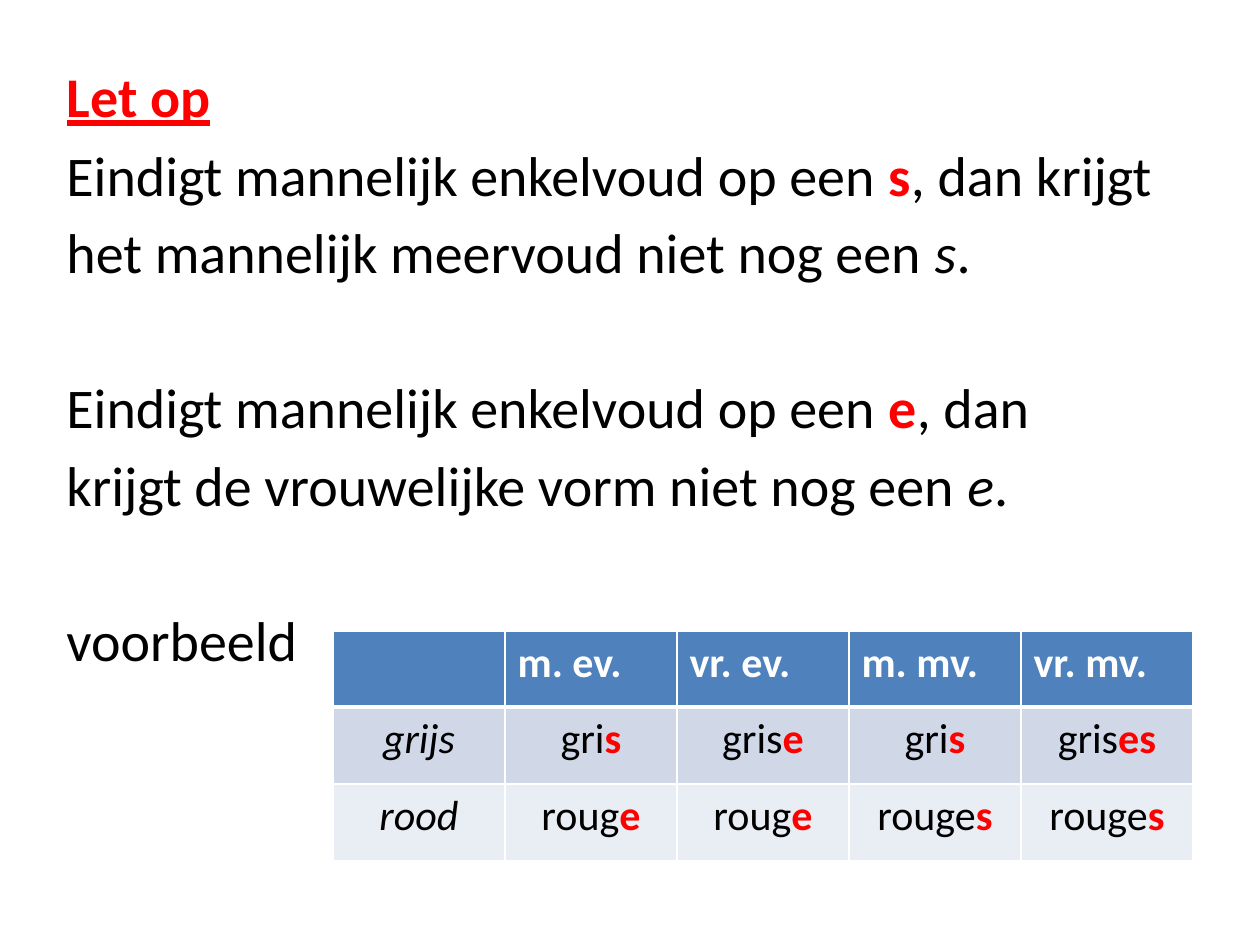
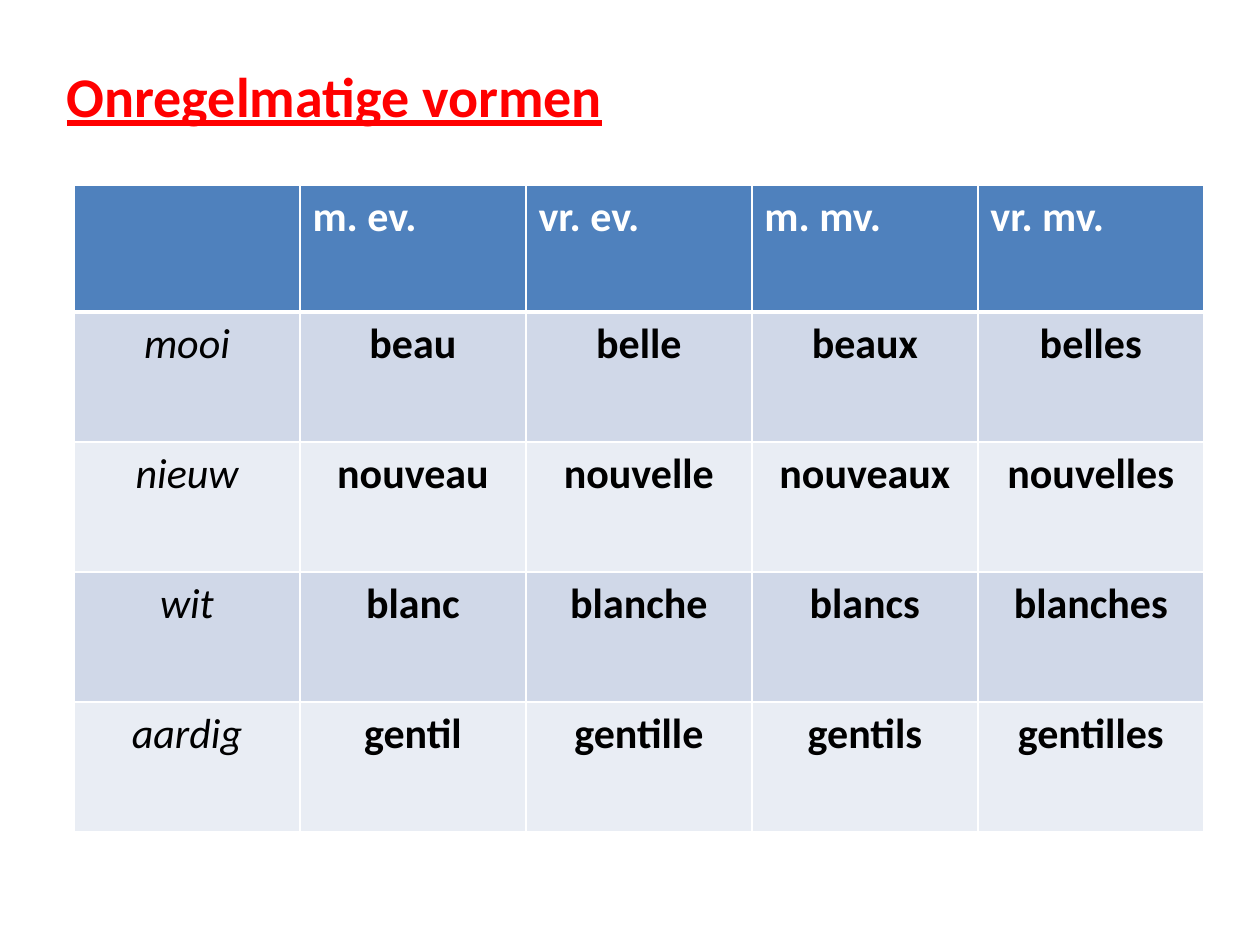
from lxml.etree import SubElement
from pptx import Presentation
from pptx.dml.color import RGBColor
from pptx.enum.text import MSO_ANCHOR as Anchor, MSO_AUTO_SIZE as AutoSize, PP_ALIGN as Align
from pptx.oxml.ns import qn
from pptx.util import Pt

PX = 914400 / 126
COLORS = {"accent": "FF0000", "text": "000000", "white": "FFFFFF",
          "header": "4F81BD", "odd": "D0D8E8", "even": "E9EDF4"}
FONT = "Calibri"
LINE_GAP, BLOCK_GAP = 5.7, 50.5
HEADER = ["", "m. ev.", "vr. ev.", "m. mv.", "vr. mv."]


def px(*lengths):
    return [round(length * PX) for length in lengths]


def add_text(paragraph, text, size=24, color="text", bold=False, italic=False, underline=False):
    run = paragraph.add_run()
    run.text = text
    font = run.font
    font.name, font.size = FONT, Pt(size)
    font.bold, font.italic, font.underline = bold, italic, underline
    font.color.rgb = RGBColor.from_string(COLORS[color])


red_bold = {"color": "accent", "bold": True}
italic = {"italic": True}

rules = [
    (LINE_GAP, "Eindigt mannelijk enkelvoud op een ", "s", red_bold, ", dan krijgt"),
    (LINE_GAP, "het mannelijk meervoud niet nog een ", "s", italic, "."),
    (BLOCK_GAP, "Eindigt mannelijk enkelvoud op een ", "e", red_bold, ", dan"),
    (LINE_GAP, "krijgt de vrouwelijke vorm niet nog een ", "e", italic, "."),
    (BLOCK_GAP, "voorbeeld", "", {}, ""),
]
regular_forms = [
    ["grijs", "gri|s", "gris|e", "gri|s", "gris|es"],
    ["rood", "roug|e", "roug|e", "rouge|s", "rouge|s"],
]
irregular_forms = [
    ["mooi", "beau", "belle", "beaux", "belles"],
    ["nieuw", "nouveau", "nouvelle", "nouveaux", "nouvelles"],
    ["wit", "blanc", "blanche", "blancs", "blanches"],
    ["aardig", "gentil", "gentille", "gentils", "gentilles"],
]
pages = [
    ("Let op", rules, regular_forms, False, (333, 631), 172, 76, 77),
    ("Onregelmatige vormen", [], irregular_forms, True, (74, 185), 226, 127, 130),
]

presentation = Presentation()
presentation.slide_width, presentation.slide_height = px(1260, 945)

for heading, lines, forms, bold_forms, corner, column_width, header_height, row_height in pages:
    slide = presentation.slides.add_slide(presentation.slide_layouts[5])
    title = slide.shapes.title
    title.left, title.top, title.width, title.height = px(54, 55, 1111, 81)
    title.text_frame.auto_size = AutoSize.NONE
    title.text_frame.vertical_anchor = Anchor.TOP
    title_paragraph = title.text_frame.paragraphs[0]
    title_paragraph.alignment = Align.LEFT
    add_text(title_paragraph, heading, size=32, underline=True, **red_bold)

    if lines:
        body = slide.shapes.add_textbox(*px(54, 134, 1120, 560)).text_frame
        body.word_wrap = True
        for index, (gap, lead, key, key_format, tail) in enumerate(lines):
            paragraph = body.add_paragraph() if index else body.paragraphs[0]
            if index:
                paragraph.space_before = Pt(gap)
            add_text(paragraph, lead, size=32)
            if key:
                add_text(paragraph, key, size=32, **key_format)
                add_text(paragraph, tail, size=32)

    rows = [HEADER] + forms
    heights = [header_height] + [row_height] * len(forms)
    table = slide.shapes.add_table(len(rows), len(HEADER), *px(
        *corner, column_width * len(HEADER), sum(heights))).table
    for column in table.columns:
        column.width = px(column_width)[0]
    for row_index, (words, height) in enumerate(zip(rows, heights)):
        table.rows[row_index].height = px(height)[0]
        is_header = row_index == 0
        fill = "header" if is_header else "odd" if row_index % 2 else "even"
        for column_index, word in enumerate(words):
            cell = table.cell(row_index, column_index)
            properties = cell._tc.get_or_add_tcPr()
            for side in "LRTB":
                thick = (side == "B" and is_header) or (side == "T" and row_index == 1)
                border = SubElement(properties, qn(f"a:ln{side}"), w=str(Pt(3 if thick else 1)))
                SubElement(SubElement(border, qn("a:solidFill")), qn("a:srgbClr"), val=COLORS["white"])
            cell.fill.solid()
            cell.fill.fore_color.rgb = RGBColor.from_string(COLORS[fill])
            paragraph = cell.text_frame.paragraphs[0]
            if is_header:
                if word:
                    add_text(paragraph, word, color="white", bold=True)
                continue
            paragraph.alignment = Align.CENTER
            stem, _, ending = word.partition("|")
            is_label = column_index == 0
            add_text(paragraph, stem, bold=bold_forms and not is_label, italic=is_label)
            if ending:
                add_text(paragraph, ending, **red_bold)

presentation.save("out.pptx")
